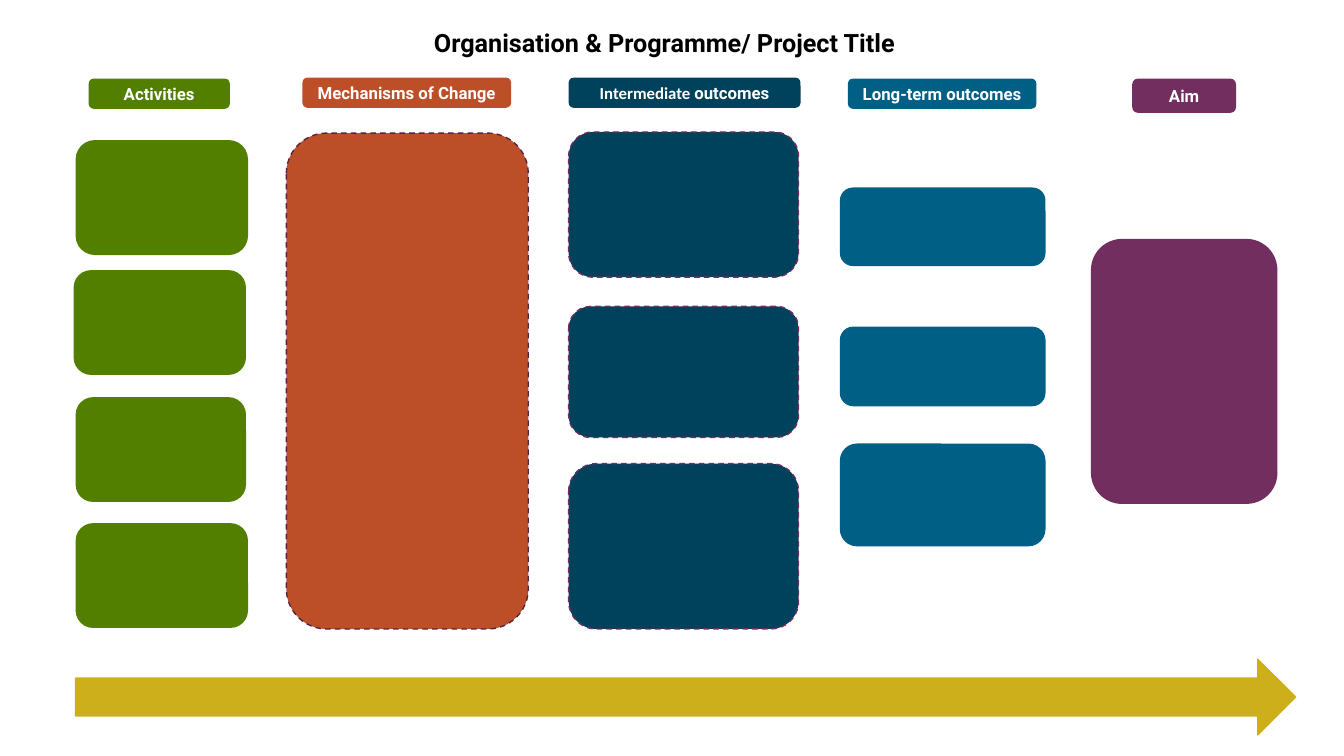
from pptx import Presentation
from pptx.dml.color import RGBColor
from pptx.enum.dml import MSO_LINE
from pptx.enum.shapes import MSO_SHAPE
from pptx.enum.text import MSO_ANCHOR, MSO_AUTO_SIZE, PP_ALIGN
from pptx.util import Pt

PX = 9144  # EMU per px, 100 px to the inch
TITLE_ONLY = 5
COLORS = {
    "green": "527F00", "orange": "BD4F28", "navy": "00415B", "blue": "005F85",
    "purple": "712E5E", "plum": "552346", "gold": "CCAF1A",
    "white": "FFFFFF", "black": "000000",
}

# Each column: fill, dashed outline, heading runs, heading box, boxes
COLUMNS = [
    ("green", None, [("Activities", "Roboto")], (88, 78, 140, 30),
     [(75, 139, 171, 114), (73, 268, 171, 104),
      (75, 394, 169, 104), (75, 519, 171, 104)]),
    ("orange", "plum", [("Mechanisms of Change", "Roboto")], (300, 77, 207, 30),
     [(284, 132, 240, 492)]),
    ("navy", "purple", [("Intermediate ", "Calibri"), ("outcomes", "Roboto")],
     (564, 77, 230, 30),
     [(564, 131, 228, 144), (564, 304, 228, 130), (564, 460, 228, 164)]),
    ("blue", None, [("Long-term outcomes", "Roboto")], (841, 78, 187, 30),
     [(833, 186, 204, 78), (833, 324, 204, 79), (833, 440, 204, 102)]),
    ("purple", None, [("Aim", "Roboto")], (1123, 78, 103, 34),
     [(1082, 237, 185, 263)]),
]


def rgb(name):
    return RGBColor.from_string(COLORS[name])


class TheoryOfChange:
    def __init__(self, prs):
        self.s = prs.slides.add_slide(prs.slide_layouts[TITLE_ONLY])

    def label(self, sp, runs, size, color):
        """Fill a shape with one centred bold line of (text, font) runs."""
        tf = sp.text_frame
        tf.word_wrap = True
        tf.auto_size = MSO_AUTO_SIZE.NONE
        tf.vertical_anchor = MSO_ANCHOR.MIDDLE
        p = tf.paragraphs[0]
        p.alignment = PP_ALIGN.CENTER
        for text, font in runs:
            r = p.add_run()
            r.text = text
            r.font.name = font
            r.font.size = Pt(size)
            r.font.bold = True
            r.font.color.rgb = rgb(color)

    def title(self, text, box):
        sp = self.s.shapes.title
        sp.left, sp.top, sp.width, sp.height = (v * PX for v in box)
        self.label(sp, [(text, "Roboto")], 18, "black")

    def shape(self, shapes, kind, box, fill, line=None):
        sp = shapes.add_shape(kind, *(v * PX for v in box))
        sp.shadow.inherit = False
        sp.fill.solid()
        sp.fill.fore_color.rgb = rgb(fill)
        if line:
            sp.line.color.rgb = rgb(line)
            sp.line.width = Pt(1)
        else:
            sp.line.fill.background()
        return sp

    def column(self, fill, outline, heading, heading_box, boxes):
        shapes = self.s.shapes.add_group_shape().shapes
        rounded = MSO_SHAPE.ROUNDED_RECTANGLE
        sp = self.shape(shapes, rounded, heading_box, fill)
        self.label(sp, heading, 12, "white")
        for box in boxes:
            sp = self.shape(shapes, rounded, box, fill, outline)
            if outline:
                sp.line.dash_style = MSO_LINE.DASH

    def arrow(self, box, color):
        self.shape(self.s.shapes, MSO_SHAPE.RIGHT_ARROW, box, color, color)


def main():
    prs = Presentation()
    prs.slide_width, prs.slide_height = 1333 * PX, 750 * PX
    diagram = TheoryOfChange(prs)
    diagram.title("Organisation & Programme/ Project Title", (159, 22, 1000, 40))
    for column in COLUMNS:
        diagram.column(*column)
    diagram.arrow((75, 654, 1210, 75), "gold")
    prs.save("out.pptx")


if __name__ == "__main__":
    main()
